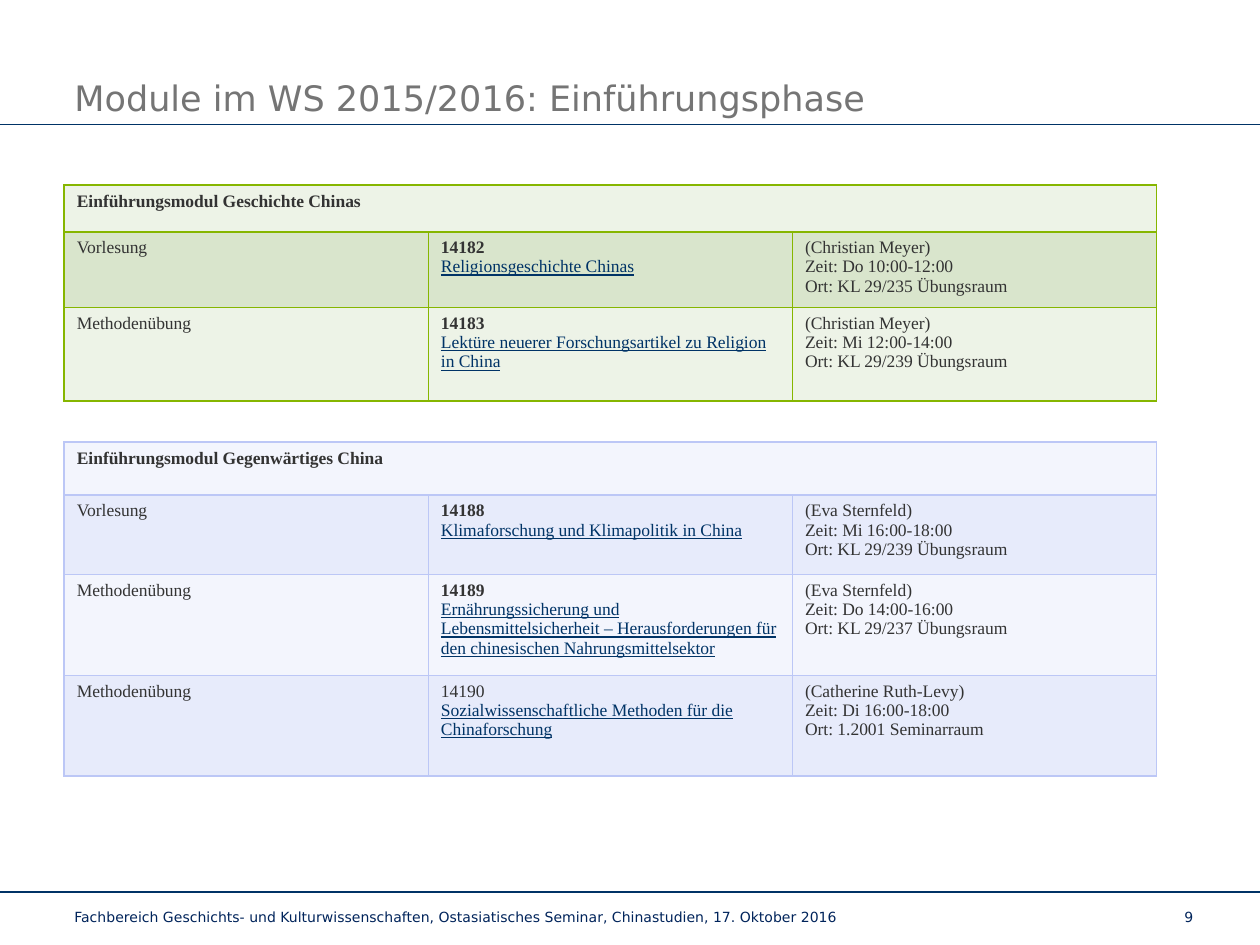
from dataclasses import dataclass

from lxml.etree import SubElement
from pptx import Presentation
from pptx.dml.color import RGBColor
from pptx.enum.shapes import MSO_CONNECTOR as Connector
from pptx.enum.text import MSO_ANCHOR as Anchor, MSO_AUTO_SIZE as AutoSize, PP_ALIGN as Align
from pptx.oxml import parse_xml
from pptx.oxml.ns import nsdecls, qn
from pptx.util import Inches, Pt


@dataclass(frozen=True)
class Theme:
    heading_font: str = "DejaVu Sans"
    table_font: str = "Times New Roman"
    title_size: int = 20
    table_size: int = 10
    footer_size: int = 8
    title_color: str = "757575"
    text_color: str = "333333"
    link_color: str = "003366"
    rule_color: str = "003366"
    footer_color: str = "00245B"


@dataclass(frozen=True)
class Course:
    kind: str
    number: str
    name: str
    teacher: str
    time: str
    place: str
    bold_number: bool = True


@dataclass(frozen=True)
class Module:
    title: str
    top: float
    row_heights: tuple[float, ...]
    border: str
    fills: tuple[str, str]  # alternating, starting with the heading row
    courses: tuple[Course, ...]


THEME = Theme()
TABLE_LEFT, COLUMN_WIDTH, COLUMN_COUNT = 0.51, 2.89, 3

MODULES = (
    Module("Einführungsmodul Geschichte Chinas", 1.47, (0.37, 0.56, 0.74),
           "86B600", ("EDF3E7", "D9E5CC"), (
        Course("Vorlesung", "14182", "Religionsgeschichte Chinas",
               "(Christian Meyer)", "Do 10:00-12:00", "KL 29/235 Übungsraum"),
        Course("Methodenübung", "14183",
               "Lektüre neuerer Forschungsartikel zu Religion in China",
               "(Christian Meyer)", "Mi 12:00-14:00", "KL 29/239 Übungsraum"),
    )),
    Module("Einführungsmodul Gegenwärtiges China", 3.51, (0.42, 0.63, 0.8, 0.8),
           "BCC7F6", ("F3F5FD", "E7EBFB"), (
        Course("Vorlesung", "14188", "Klimaforschung und Klimapolitik in China",
               "(Eva Sternfeld)", "Mi 16:00-18:00", "KL 29/239 Übungsraum"),
        Course("Methodenübung", "14189",
               "Ernährungssicherung und Lebensmittelsicherheit – "
               "Herausforderungen für den chinesischen Nahrungsmittelsektor",
               "(Eva Sternfeld)", "Do 14:00-16:00", "KL 29/237 Übungsraum"),
        Course("Methodenübung", "14190",
               "Sozialwissenschaftliche Methoden für die Chinaforschung",
               "(Catherine Ruth-Levy)", "Di 16:00-18:00", "1.2001 Seminarraum",
               bold_number=False),
    )),
)


def add_run(para, text: str, font: str, size: int, color: str,
            bold: bool = False, underline: bool = False) -> None:
    span = para.add_run()
    span.text = text
    span.font.name = font
    span.font.size = Pt(size)
    span.font.color.rgb = RGBColor.from_string(color)
    span.font.bold = bold
    span.font.underline = underline


def add_cell_line(cell, text: str, bold: bool = False, link: bool = False) -> None:
    """Write one line into a cell, using its empty first paragraph if there is one."""
    frame = cell.text_frame
    para = frame.add_paragraph() if frame.text else frame.paragraphs[0]
    para.alignment = Align.LEFT
    color = THEME.link_color if link else THEME.text_color
    add_run(para, text, THEME.table_font, THEME.table_size, color, bold, link)


def style_cell(cell, fill: str, border: str) -> None:
    cell.fill.solid()
    cell.fill.fore_color.rgb = RGBColor.from_string(fill)
    properties = cell._tc.get_or_add_tcPr()
    # Borders come before the fill
    for index, side in enumerate(("lnL", "lnR", "lnT", "lnB")):
        properties.insert(index, parse_xml(
            f'<a:{side} {nsdecls("a")} w="{Pt(1)}"><a:solidFill>'
            f'<a:srgbClr val="{border}"/></a:solidFill></a:{side}>'))


def add_module(page, module: Module) -> None:
    heights = module.row_heights
    table = page.shapes.add_table(
        len(heights), COLUMN_COUNT, Inches(TABLE_LEFT), Inches(module.top),
        Inches(COLUMN_WIDTH * COLUMN_COUNT), Inches(sum(heights))).table
    table.first_row = table.horz_banding = False
    for column in table.columns:
        column.width = Inches(COLUMN_WIDTH)
    for index, (row, height) in enumerate(zip(table.rows, heights)):
        row.height = Inches(height)
        for cell in row.cells:
            style_cell(cell, module.fills[index % 2], module.border)

    # Heading across all columns
    heading = table.cell(0, 0)
    heading.merge(table.cell(0, COLUMN_COUNT - 1))
    add_cell_line(heading, module.title, bold=True)

    # One row per course
    for index, course in enumerate(module.courses, start=1):
        kind, name, details = table.rows[index].cells
        add_cell_line(kind, course.kind)
        add_cell_line(name, course.number, bold=course.bold_number)
        add_cell_line(name, course.name, link=True)
        for line in (course.teacher, f"Zeit: {course.time}", f"Ort: {course.place}"):
            add_cell_line(details, line)


def add_rule(page, top: float) -> None:
    rule = page.shapes.add_connector(
        Connector.STRAIGHT, Inches(0), Inches(top), Inches(10), Inches(top))
    rule.line.color.rgb = RGBColor.from_string(THEME.rule_color)
    rule.line.width = Pt(0.75)
    SubElement(rule._element.spPr, qn("a:effectLst"))


def add_footer(page, text: str, left: float, width: float, height: float,
               side_margin: float, align: Align) -> None:
    box = page.shapes.add_textbox(
        Inches(left), Inches(7.16), Inches(width), Inches(height))
    frame = box.text_frame
    frame.word_wrap = True
    frame.margin_left = frame.margin_right = Inches(side_margin)
    para = frame.paragraphs[0]
    para.alignment = align
    add_run(para, text, THEME.heading_font, THEME.footer_size, THEME.footer_color)


def add_title(page, text: str) -> None:
    title = page.shapes.title
    title.left, title.top = Inches(0.59), Inches(0.58)
    title.width, title.height = Inches(7.91), Inches(0.36)
    frame = title.text_frame
    frame.auto_size = AutoSize.NONE
    frame.word_wrap = True
    frame.vertical_anchor = Anchor.BOTTOM
    frame.margin_left = frame.margin_right = frame.margin_top = frame.margin_bottom = 0
    para = frame.paragraphs[0]
    para.alignment = Align.LEFT
    para.line_spacing = 0.85
    add_run(para, text, THEME.heading_font, THEME.title_size, THEME.title_color)


def main() -> None:
    deck = Presentation()
    deck.slide_width, deck.slide_height = Inches(10), Inches(7.5)
    page = deck.slides.add_slide(deck.slide_layouts[5])

    # Frame of the page: rules, footer and page number
    for top in (0.99, 7.08):
        add_rule(page, top)
    add_footer(page, "9", 8.23, 1.34, 0.26, 0.1, Align.RIGHT)
    add_footer(page, "Fachbereich Geschichts- und Kulturwissenschaften, "
               "Ostasiatisches Seminar, Chinastudien, 17. Oktober 2016",
               0.59, 7.85, 0.34, 0, Align.LEFT)

    # Content
    add_title(page, "Module im WS 2015/2016: Einführungsphase")
    for module in MODULES:
        add_module(page, module)

    deck.save("out.pptx")


if __name__ == "__main__":
    main()
